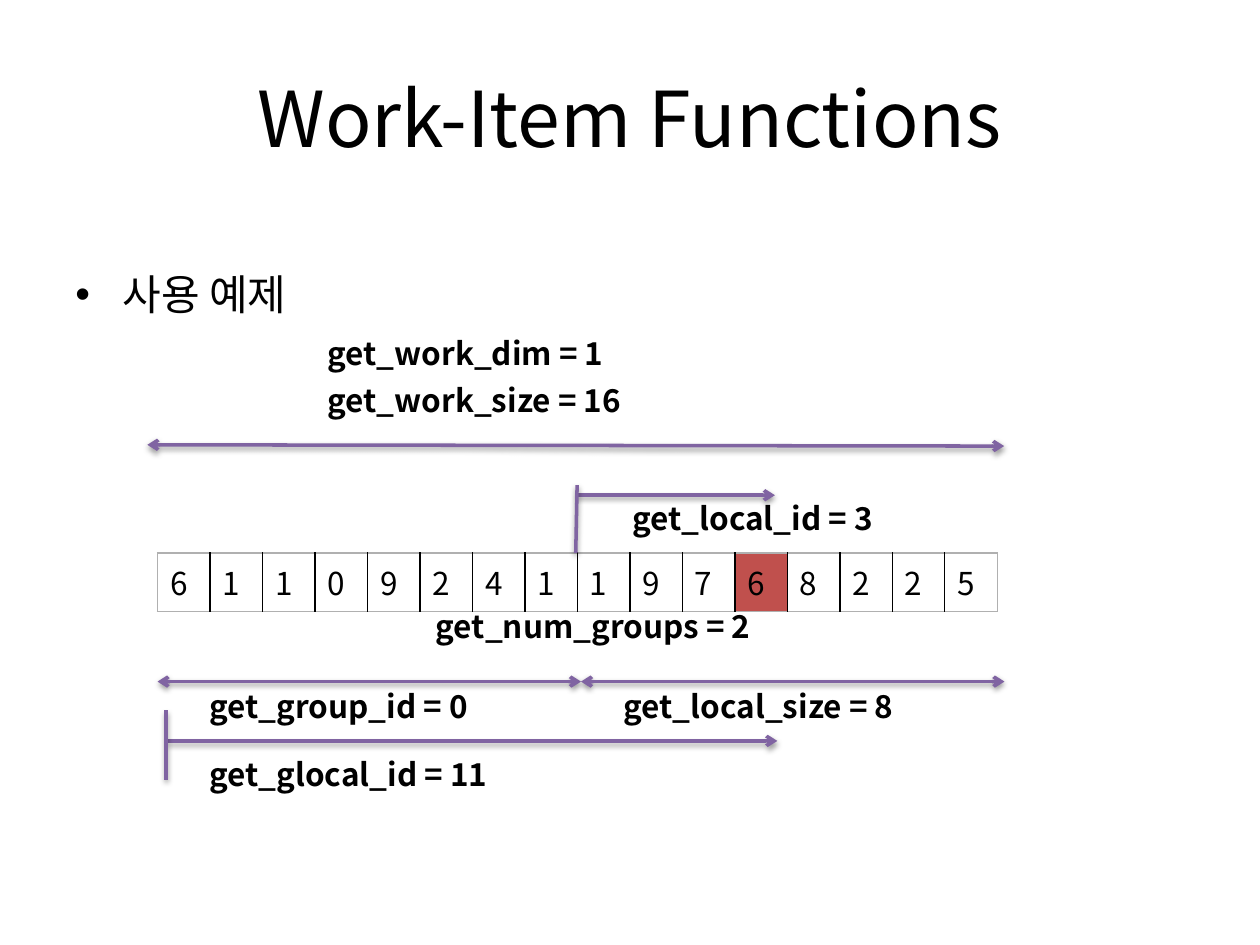
from lxml import etree
from pptx import Presentation
from pptx.dml.color import RGBColor
from pptx.enum.shapes import MSO_CONNECTOR as Conn
from pptx.enum.text import MSO_ANCHOR as Anchor, MSO_AUTO_SIZE as Auto, PP_ALIGN as Align
from pptx.oxml.ns import qn
from pptx.util import Pt


def color(code):
    return RGBColor.from_string(code)


def add(node, tag, **attrs):
    return etree.SubElement(node, qn(tag), attrs)


def write(frame, text, size=18, bold=False, align=Align.LEFT, ink="000000",
          face="Noto Sans CJK KR"):
    """Fill the first paragraph of a text frame and return it."""
    par = frame.paragraphs[0]
    par.alignment = align
    run = par.add_run()
    run.text = text
    font = run.font
    font.size, font.bold, font.name = Pt(size), bold, face
    font.color.rgb = color(ink)
    add(font._element, "a:ea", typeface=face)
    return par


class Board:
    ink, line, mark, edge = "000000", "8064A2", "C0504D", "B0B0B0"

    def __init__(self, slide):
        self.slide = slide

    def text(self, text, x, y, w, h, anchor=Anchor.TOP, auto=Auto.NONE, **form):
        frame = self.slide.shapes.add_textbox(Pt(x), Pt(y), Pt(w), Pt(h)).text_frame
        frame.word_wrap = True
        frame.auto_size = auto
        frame.vertical_anchor = anchor
        return write(frame, text, ink=self.ink, **form)

    def label(self, text, x, y, w=276):
        self.text(text, x, y, w, 29, auto=Auto.SHAPE_TO_FIT_TEXT, bold=True)

    def bullet(self, text, x, y, w, h, **form):
        props = self.text(text, x, y, w, h, **form)._p.get_or_add_pPr()
        props.set("marL", str(Pt(27)))
        props.set("indent", str(Pt(-27)))
        add(props, "a:buFont", typeface="Arial")
        add(props, "a:buChar", char="•")

    def arrow(self, x1, y1, x2, y2, head=False, tail=False):
        link = self.slide.shapes.add_connector(
            Conn.STRAIGHT, Pt(x1), Pt(y1), Pt(x2), Pt(y2))
        link.line.color.rgb = color(self.line)
        link.line.width = Pt(2)
        stroke = link.line._get_or_add_ln()
        for tag, used in (("a:headEnd", head), ("a:tailEnd", tail)):
            if used:
                add(stroke, tag, type="arrow")
        effects = add(link._element.spPr, "a:effectLst")
        shade = add(effects, "a:outerShdw", blurRad=str(Pt(3.1)), dist=str(Pt(1.6)),
                    dir="5400000", rotWithShape="0")
        add(add(shade, "a:srgbClr", val="000000"), "a:alpha", val="38000")

    def border(self, cell, side, code, width):
        stroke = add(cell._tc.get_or_add_tcPr(), "a:" + side, w=str(Pt(width)))
        add(add(stroke, "a:solidFill"), "a:srgbClr", val=code)

    def row(self, values, x, y, step, high, pick):
        """Draw one table row of values, with the cell at index pick filled."""
        count = len(values)
        table = self.slide.shapes.add_table(
            1, count, Pt(x), Pt(y), Pt(step * count), Pt(high)).table
        table.first_row = table.horz_banding = False
        table.rows[0].height = Pt(high)
        for i, value in enumerate(values):
            table.columns[i].width = Pt(step)
            cell = table.cell(0, i)
            write(cell.text_frame, value, ink=self.ink)
            outer, inner = (self.edge, 0.75), (self.ink, 1)
            self.border(cell, "lnL", *(inner if i else outer))
            self.border(cell, "lnR", *(inner if i < count - 1 else outer))
            self.border(cell, "lnT", *outer)
            self.border(cell, "lnB", *outer)
            cell.fill.solid()
            cell.fill.fore_color.rgb = color(self.mark if i == pick else "FFFFFF")


def main():
    deck = Presentation()
    deck.slide_width, deck.slide_height = Pt(720), Pt(540)
    board = Board(deck.slides.add_slide(deck.slide_layouts[6]))

    board.text("Work-Item Functions", 36, 21.6, 648, 90, anchor=Anchor.MIDDLE,
               size=44, align=Align.CENTER)
    board.bullet("사용 예제", 36, 149.8, 648, 356, size=24)
    board.row("6110924119768225", 90, 316, 30, 29.5, pick=11)

    # Work size
    board.arrow(84.2, 254.2, 573.8, 254.9, head=True, tail=True)
    # Local id
    board.arrow(329.8, 283, 442.8, 283, tail=True)
    board.arrow(329.8, 277.2, 329, 316)
    # The two groups
    for left in (90, 332):
        board.arrow(left, 389.5, left + 242, 389.5, head=True, tail=True)
    # Global id
    board.arrow(95.8, 423.4, 444.2, 423.4, tail=True)
    board.arrow(95, 406, 95, 445.7)

    board.label("get_work_dim = 1", 180, 187.2)
    board.label("get_work_size = 16", 180, 214)
    board.label("get_local_id = 3", 354.2, 281.5)
    board.label("get_group_id = 0", 112.5, 388.8, 168.5)
    board.label("get_local_size = 8", 349.2, 388.8, 185)
    board.label("get_glocal_id = 11", 112.5, 427.7)
    board.label("get_num_groups = 2", 241.9, 343.4)

    deck.save("out.pptx")


if __name__ == "__main__":
    main()
